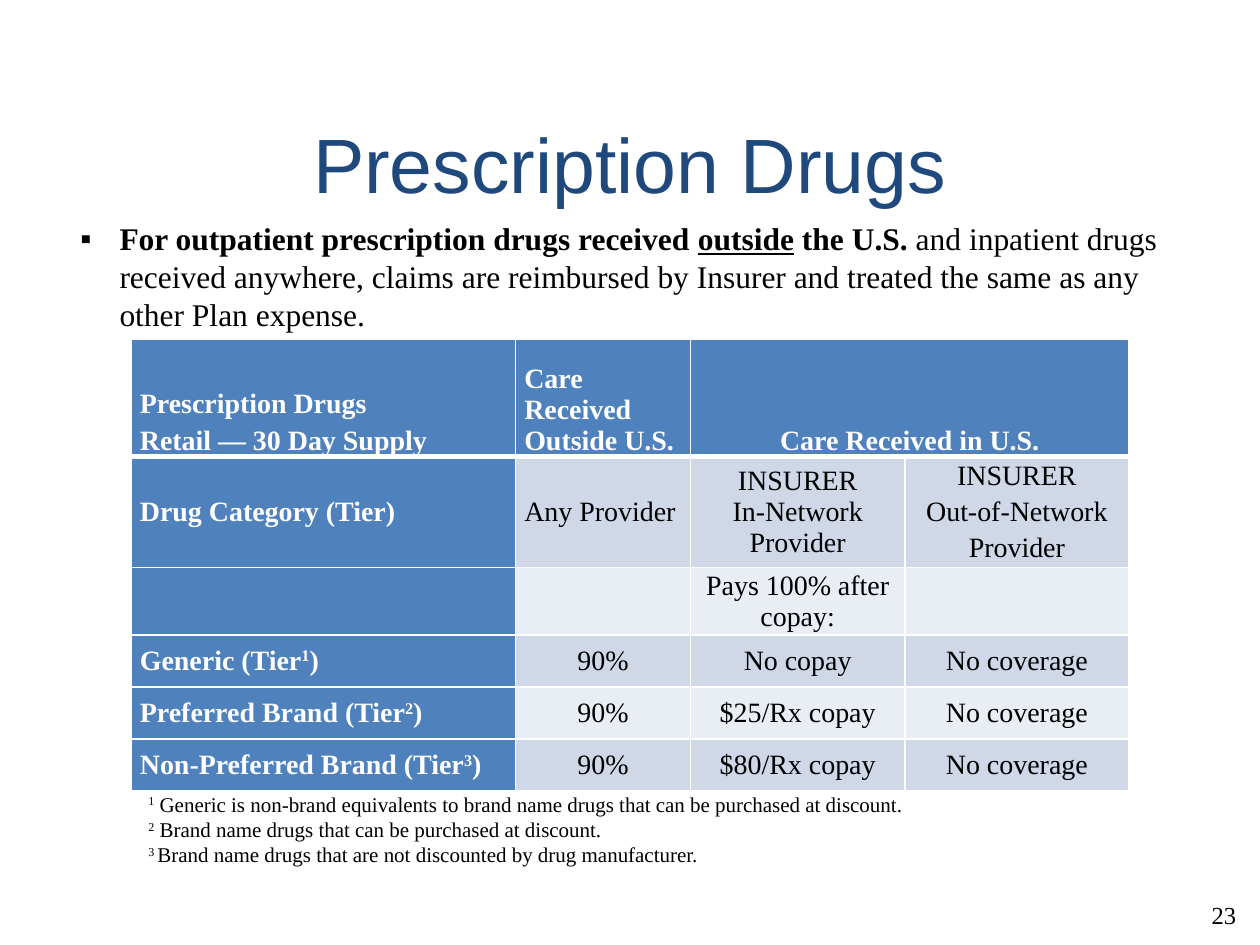
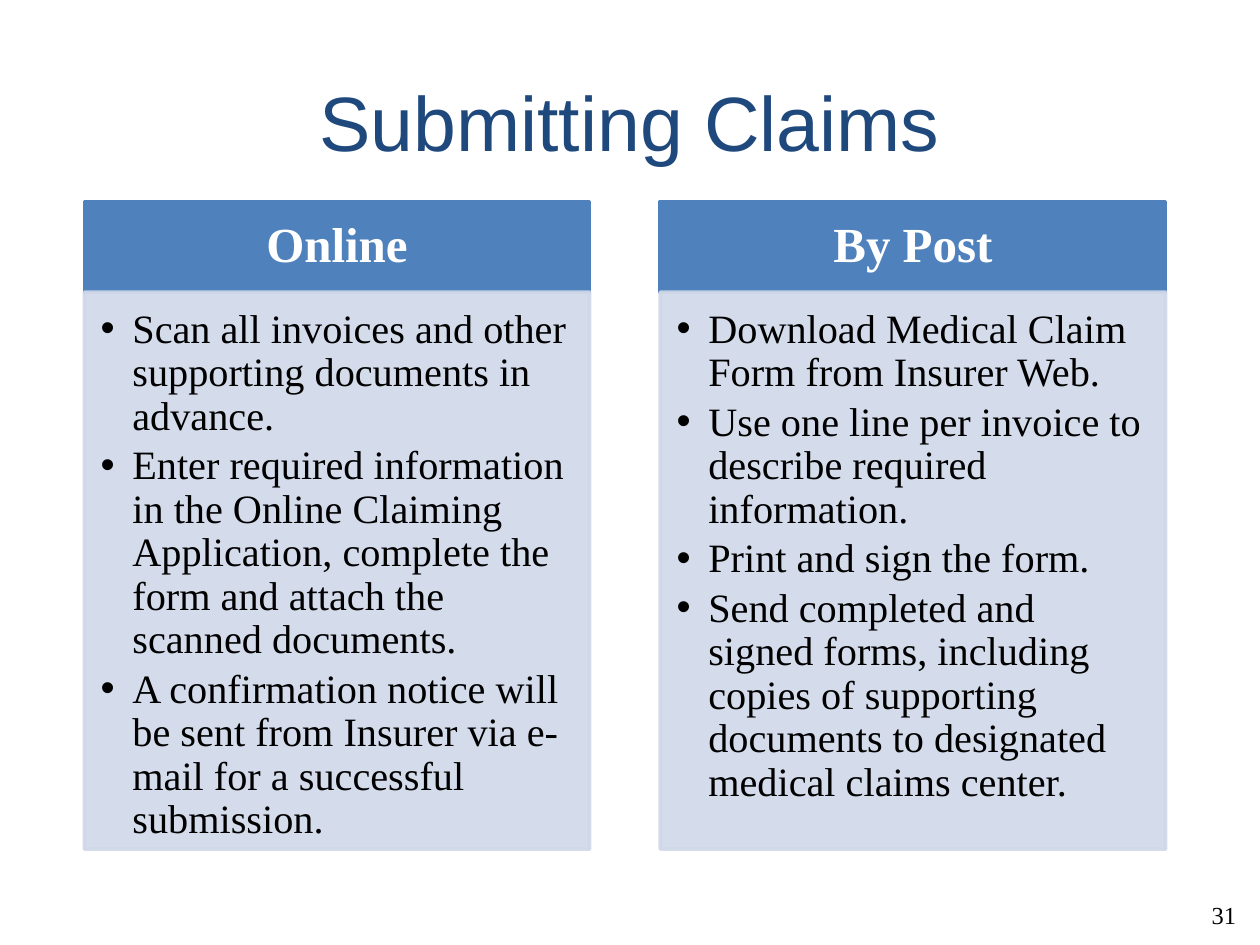
from lxml.etree import SubElement
from pptx import Presentation
from pptx.dml.color import RGBColor as RGB
from pptx.enum.shapes import MSO_SHAPE as SHAPE
from pptx.enum.text import MSO_ANCHOR as ANCHOR, PP_ALIGN as ALIGN
from pptx.oxml.ns import qn
from pptx.util import Cm, Pt

COLORS = {"title": "1F497D", "accent": "4F81BD", "band": "D0D8E8",
          "light": "E9EDF4", "text": "000000", "white": "FFFFFF"}
TITLE_FONT, BODY_FONT = "Arial", "Times New Roman"
INSETS = (0.25, 0.13, 0.25, 0.13)


def write(tf, paras, size, color="text", font=BODY_FONT, bold=False, align=ALIGN.LEFT,
          anchor=ANCHOR.TOP, insets=INSETS, after=0, spacing=1.0, bullet=None, indent=0):
    """Fill a frame; a paragraph is a string or a list of (text, marks): b bold, u underline, ^ raised."""
    tf.word_wrap = True
    tf.vertical_anchor = anchor
    tf.margin_left, tf.margin_top, tf.margin_right, tf.margin_bottom = map(Cm, insets)
    for i, runs in enumerate(paras):
        p = tf.paragraphs[0] if i == 0 else tf.add_paragraph()
        if bullet:
            pPr = p._p.get_or_add_pPr()
            pPr.set("marL", str(Cm(indent)))
            pPr.set("indent", str(-Cm(indent)))
            SubElement(pPr, qn("a:buFont"), typeface="Arial")
            SubElement(pPr, qn("a:buChar"), char=bullet)
        p.alignment, p.line_spacing, p.space_after = align, spacing, Pt(after)
        for text, marks in [(runs, "")] if isinstance(runs, str) else runs:
            r = p.add_run()
            r.text = text
            r.font.name, r.font.size = font, Pt(size)
            r.font.bold = bold or "b" in marks
            r.font.color.rgb = RGB.from_string(COLORS[color])
            if "u" in marks:
                r.font.underline = True
            if "^" in marks:
                r._r.get_or_add_rPr().set("baseline", "30000")


def add_text(s, left, top, width, height, paras, size, **style):
    tf = s.shapes.add_textbox(Cm(left), Cm(top), Cm(width), Cm(height)).text_frame
    write(tf, paras, size, **style)
    return tf


prs = Presentation()
prs.slide_width, prs.slide_height = Cm(25.4), Cm(19.05)

# Title and page number of each slide
slides = []
for title, title_top, number in [("Prescription Drugs", 1.7, "23"),
                                 ("Submitting Claims", 0.84, "31")]:
    s = prs.slides.add_slide(prs.slide_layouts[6])
    add_text(s, 1.9, title_top, 21.6, 3.18, [title], 44, color="title", font=TITLE_FONT,
             align=ALIGN.CENTER, anchor=ANCHOR.MIDDLE)
    tf = add_text(s, 24.08, 18.01, 1.09, 0.84, [number], 14,
                  align=ALIGN.RIGHT, anchor=ANCHOR.MIDDLE)
    tf.word_wrap = False
    slides.append(s)
drugs, claims = slides

# Prescription drugs: table of benefits
rows = [
    [["Prescription Drugs", "Retail — 30 Day Supply"], ["Care Received", "Outside U.S."],
     ["Care Received in U.S."], []],
    [["Drug Category (Tier)"], ["Any Provider"], ["INSURER", "In-Network", "Provider"],
     ["INSURER", "Out-of-Network", "Provider"]],
    [[], [], ["Pays 100% after copay:"], []],
]
for tier, (name, copay) in enumerate([("Generic", "No copay"), ("Preferred Brand", "$25/Rx copay"),
                                      ("Non-Preferred Brand", "$80/Rx copay")], 1):
    rows.append([[[(f"{name} (Tier", ""), (str(tier), "^"), (")", "")]],
                 ["90%"], [copay], ["No coverage"]])

col_widths = [7.75, 3.53, 4.32, 4.52]
row_heights = [2.36, 2.11, 1.26] + [1.05] * 3
table = drugs.shapes.add_table(len(rows), len(col_widths), Cm(2.64), Cm(6.84),
                               Cm(sum(col_widths)), Cm(sum(row_heights))).table
for col, width in zip(table.columns, col_widths):
    col.width = Cm(width)
for row, height in zip(table.rows, row_heights):
    row.height = Cm(height)

for i, row in enumerate(rows):
    for j, paras in enumerate(row):
        cell = table.cell(i, j)
        tcPr = cell._tc.get_or_add_tcPr()
        for side in ("L", "R", "T", "B"):
            thick = (i, side) in [(0, "B"), (1, "T")]
            ln = SubElement(tcPr, qn(f"a:ln{side}"), w=str(Pt(3 if thick else 1)))
            fill = SubElement(ln, qn("a:solidFill"))
            SubElement(fill, qn("a:srgbClr"), val=COLORS["white"])
        head = i == 0 or j == 0
        cell.fill.solid()
        cell.fill.fore_color.rgb = RGB.from_string(
            COLORS["accent" if head else "band" if i % 2 else "light"])
        cell.margin_left = cell.margin_right = Cm(0.18)
        cell.margin_top = cell.margin_bottom = 0
        cell.vertical_anchor = ANCHOR.BOTTOM if i == 0 else ANCHOR.MIDDLE
        left = j == 0 or (j == 1 and i < 2)
        tight = (i, j) in [(0, 1), (1, 2)]
        write(cell.text_frame, paras, 16, color="white" if head else "text", bold=head,
              align=ALIGN.LEFT if left else ALIGN.CENTER, anchor=cell.vertical_anchor,
              insets=(0.18, 0, 0.18, 0), after=0 if tight else 3)
table.cell(0, 2).merge(table.cell(0, 3))

add_text(drugs, 1.37, 4.29, 22.86, 2.57, [[
    ("For outpatient prescription drugs received ", "b"), ("outside", "bu"), (" the U.S.", "b"),
    (" and inpatient drugs received anywhere, claims are reimbursed by Insurer and treated "
     "the same as any other Plan expense.", "")]], 18, bullet="▪", indent=0.79)
add_text(drugs, 2.74, 15.82, 19.89, 1.8, [
    [("1", "^"), (" Generic is non-brand equivalents to brand name drugs that can be "
                  "purchased at discount.", "")],
    [("2", "^"), (" Brand name drugs that can be purchased at discount.", "")],
    [("3 ", "^"), ("Brand name drugs that are not discounted by drug manufacturer.", "")]], 12)

# Submitting claims: one column for each way
ways = [
    ("Online", ["Scan all invoices and other supporting documents in advance.",
                "Enter required information in the Online Claiming Application, complete "
                "the form and attach the scanned documents.",
                "A confirmation notice will be sent from Insurer via e-mail for a "
                "successful submission."]),
    ("By Post", ["Download Medical Claim Form from Insurer Web.",
                 "Use one line per invoice to describe required information.",
                 "Print and sign the form.",
                 "Send completed and signed forms, including copies of supporting "
                 "documents to designated medical claims center."]),
]
col_left, col_pitch, col_width = 1.7, 11.61, 10.19
head_top, head_height, body_height = 4.06, 1.83, 11.23
for i, (way, steps) in enumerate(ways):
    x = Cm(col_left + i * col_pitch)
    head = claims.shapes.add_shape(SHAPE.RECTANGLE, x, Cm(head_top), Cm(col_width), Cm(head_height))
    body = claims.shapes.add_shape(SHAPE.RECTANGLE, x, Cm(head_top + head_height),
                                   Cm(col_width), Cm(body_height))
    for sp, color in [(head, "accent"), (body, "band")]:
        sp.shadow.inherit = False
        sp.fill.solid()
        sp.line.width = Pt(2)
        for target in (sp.fill.fore_color, sp.line.color):
            target.rgb = RGB.from_string(COLORS[color])
    for clr in body._element.spPr.iter(qn("a:srgbClr")):
        SubElement(clr, qn("a:alpha"), val="90000")
    write(head.text_frame, [way], 28, color="white", bold=True, align=ALIGN.CENTER,
          anchor=ANCHOR.MIDDLE, insets=(0.56, 0.3, 0.56, 0.3), spacing=0.9)
    write(body.text_frame, steps, 23, insets=(0.33, 0.33, 0.46, 0.5), after=3.5,
          spacing=0.9, bullet="•", indent=0.64)

prs.save("out.pptx")
